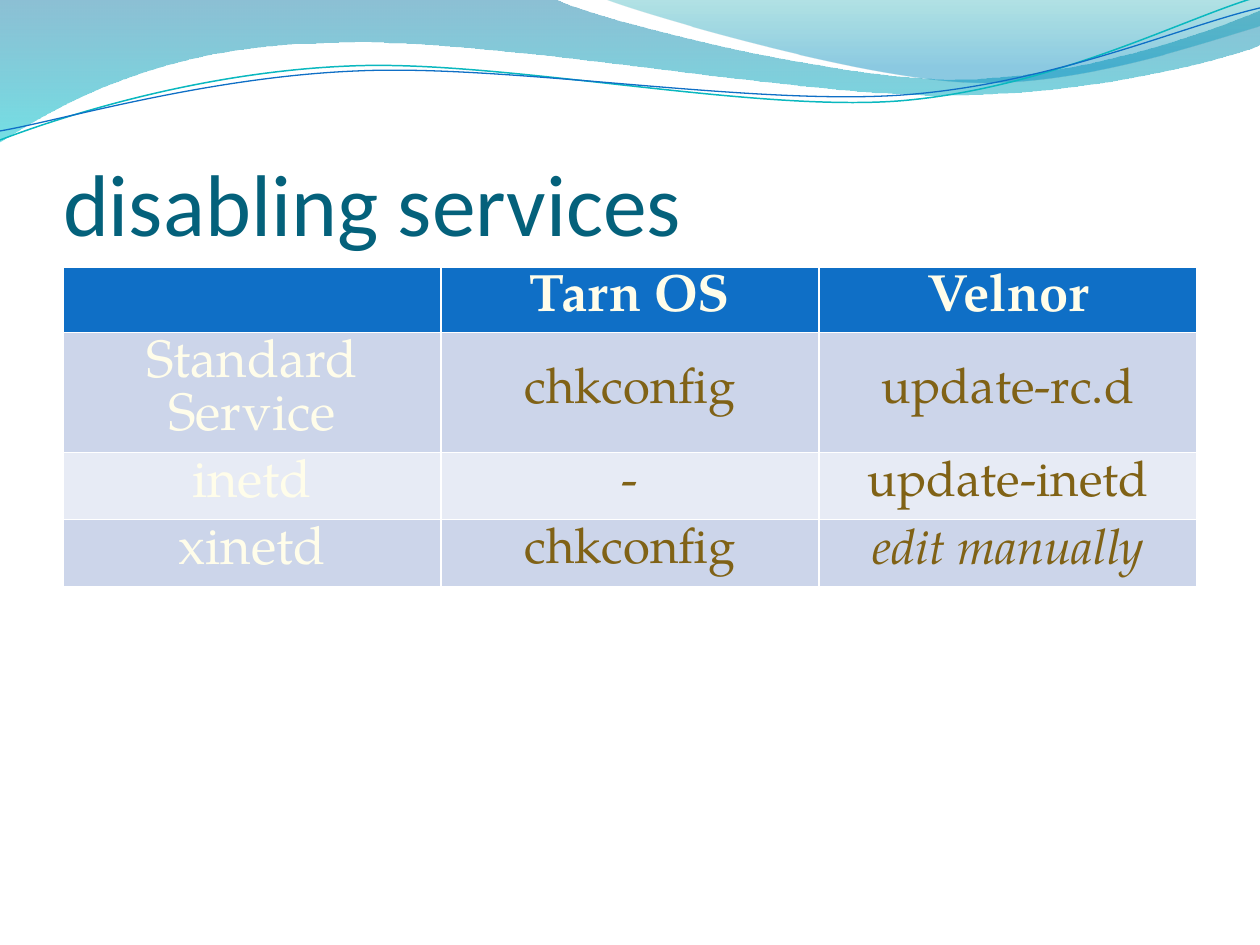
import dataclasses

import lxml.etree
import pptx
import pptx.dml.color
import pptx.enum.text
import pptx.oxml.ns
import pptx.util

SCALE = pptx.util.Inches(1) / 126


@dataclasses.dataclass(frozen=True)
class Theme:
    """Colours, fonts and type sizes of the slide."""
    title_font: str = "Calibri"
    table_font: str = "TeX Gyre Pagella"
    title_size: int = 50
    label_size: int = 30
    value_size: int = 28
    title: str = "04617B"
    header: str = "0F6FC6"
    bands: tuple = ("CCD5EA", "E7EBF5")
    label: str = "FFFDEA"
    value: str = "806216"
    wave: tuple = ((0, "0074A1", 45), (1, "00C6CF", 55))
    crest: tuple = ((0, "00A1A9", 30), (0.8, "008BBF", 45))
    teal_line: str = "0AB8BF"
    blue_line: str = "0F6FC6"


THEME = Theme()

WAVE = [(0, 0), (554, -1), (600, 21, 837, 79, 955, 79), (1075, 79, 1207, 33, 1260, 11),
        (1261, 45), (1239, 55, 1096, 96, 940, 95), (784, 95, 481, 35, 324, 43),
        (163, 45, 58, 105, -1, 142), (0, 0)]
CREST = [(604, -1), (641, 14, 859, 78, 969, 82), (1079, 87, 1211, 40, 1260, 26), (1260, 0),
         (604, -1)]
TEAL_CURVE = [(0, 140), (60, 117, 199, 72, 349, 66), (498, 59, 747, 112, 898, 101),
              (1050, 89, 1182, 19, 1257, -3)]
BLUE_CURVE = [(0, 131), (59, 121, 207, 77, 357, 71), (508, 64, 752, 106, 903, 95),
              (1053, 84, 1182, 26, 1260, 8)]

ROWS = [["", "Tarn OS", "Velnor"],
        ["Standard Service", "chkconfig", "update-rc.d"],
        ["inetd", "-", "update-inetd"],
        ["xinetd", "chkconfig", "edit manually"]]
ROW_HEIGHT = 52


def px(length):
    """Turn px into EMU."""
    return pptx.util.Emu(round(length * SCALE))


def rgb(value):
    """Turn a hex string into a colour."""
    return pptx.dml.color.RGBColor.from_string(value)


def apply_format(target, values):
    """Set each named attribute on the target."""
    for name, value in values.items():
        setattr(target, name, value)


def place(shape, box):
    """Move and size a shape to the box."""
    apply_format(shape, dict(zip(("left", "top", "width", "height"), map(px, box))))


def format_font(font, color, **values):
    """Set the colour and other values of a font."""
    apply_format(font, values)
    font.color.rgb = rgb(color)


def bend(shape, segments, box):
    """Turn the straight segments of a freeform into cubic curves where given."""
    lines = list(shape._element.iter(pptx.oxml.ns.qn("a:lnTo")))
    for line, segment in zip(lines, segments[1:]):
        if len(segment) == 2:
            continue
        curve = lxml.etree.Element(pptx.oxml.ns.qn("a:cubicBezTo"))
        for x, y in zip(segment[::2], segment[1::2]):
            lxml.etree.SubElement(curve, pptx.oxml.ns.qn("a:pt"),
                                  x=str(px(box[0] + x) - shape.left),
                                  y=str(px(box[1] + y) - shape.top))
        line.getparent().replace(line, curve)


def add_outline(slide, box, segments):
    """Draw a freeform relative to the corner of the box."""
    points = [(px(box[0] + segment[-2]), px(box[1] + segment[-1])) for segment in segments]
    builder = slide.shapes.build_freeform(*points[0])
    builder.add_line_segments(points[1:], close=points[0] == points[-1])
    shape = builder.convert_to_shape()
    shape.shadow.inherit = False
    bend(shape, segments, box)
    return shape


def add_band(slide, box, segments, stops):
    """Draw a closed band with a translucent downward gradient."""
    shape = add_outline(slide, box, segments)
    shape.line.fill.background()
    shape.fill.gradient()
    shape.fill.gradient_angle = 270
    for stop, (position, color, _) in zip(shape.fill.gradient_stops, stops):
        stop.position = position
        stop.color.rgb = rgb(color)
    colors = shape._element.spPr.iter(pptx.oxml.ns.qn("a:srgbClr"))
    for element, (_, _, alpha) in zip(colors, stops):
        lxml.etree.SubElement(element, pptx.oxml.ns.qn("a:alpha"), val=str(alpha * 1000))
    return shape


def add_curve(slide, box, segments, color, width):
    """Draw an open thin curve."""
    shape = add_outline(slide, box, segments)
    shape.fill.background()
    shape.line.color.rgb = rgb(color)
    shape.line.width = pptx.util.Pt(width)
    return shape


def add_header_waves(slide, box):
    """Draw the bands and curves along the top and hand them to the slide master."""
    waves = [add_band(slide, box, WAVE, THEME.wave),
             add_band(slide, box, CREST, THEME.crest),
             add_curve(slide, box, TEAL_CURVE, THEME.teal_line, 0.85),
             add_curve(slide, box, BLUE_CURVE, THEME.blue_line, 0.75)]
    master_tree = slide.slide_layout.slide_master.shapes._spTree
    for index, shape in enumerate(waves):
        shape._element.nvSpPr.cNvPr.set("id", str(100 + index))
        master_tree.insert(2 + index, shape._element)


def add_title(slide, box, text):
    """Fill and place the title placeholder."""
    title = slide.shapes.title
    place(title, box)
    frame = title.text_frame
    frame.text = text
    apply_format(frame, {
        "margin_left": 0, "margin_right": 0, "margin_bottom": 0, "margin_top": px(6),
        "vertical_anchor": pptx.enum.text.MSO_ANCHOR.BOTTOM,
        "auto_size": pptx.enum.text.MSO_AUTO_SIZE.NONE, "word_wrap": True})
    paragraph = frame.paragraphs[0]
    paragraph.alignment = pptx.enum.text.PP_ALIGN.LEFT
    format_font(paragraph.runs[0].font, THEME.title, name=THEME.title_font,
                size=pptx.util.Pt(THEME.title_size))


def format_cell(cell, row, column, text):
    """Write one cell and style it by its row and column."""
    cell.fill.solid()
    cell.fill.fore_color.rgb = rgb(THEME.bands[(row - 1) % 2] if row else THEME.header)
    if not text:
        return
    apply_format(cell, dict.fromkeys(
        ("margin_left", "margin_right", "margin_top", "margin_bottom"), px(7)))
    cell.vertical_anchor = pptx.enum.text.MSO_ANCHOR.MIDDLE
    cell.text = text
    paragraph = cell.text_frame.paragraphs[0]
    paragraph.alignment = pptx.enum.text.PP_ALIGN.CENTER
    is_label = row == 0 or column == 0
    format_font(paragraph.runs[0].font, THEME.label if is_label else THEME.value,
                name=THEME.table_font, bold=row == 0, italic=text == "edit manually",
                size=pptx.util.Pt(THEME.label_size if is_label else THEME.value_size))


def add_service_table(slide, box):
    """Place the table of commands for each kind of service."""
    frame = slide.shapes.add_table(len(ROWS), len(ROWS[0]), *map(px, box))
    for row, texts in enumerate(ROWS):
        frame.table.rows[row].height = px(ROW_HEIGHT)
        for column, text in enumerate(texts):
            format_cell(frame.table.cell(row, column), row, column, text)
    place(frame, box)


def main():
    """Build and save the presentation."""
    presentation = pptx.Presentation()
    apply_format(presentation, {"slide_width": px(1260), "slide_height": px(945)})
    slide = presentation.slides.add_slide(presentation.slide_layouts[5])
    add_header_waves(slide, (0, 0, 1260, 142))
    add_title(slide, (63, 96, 1134, 158), "disabling services")
    add_service_table(slide, (63, 267, 1134, 370))
    presentation.save("out.pptx")


if __name__ == "__main__":
    main()
